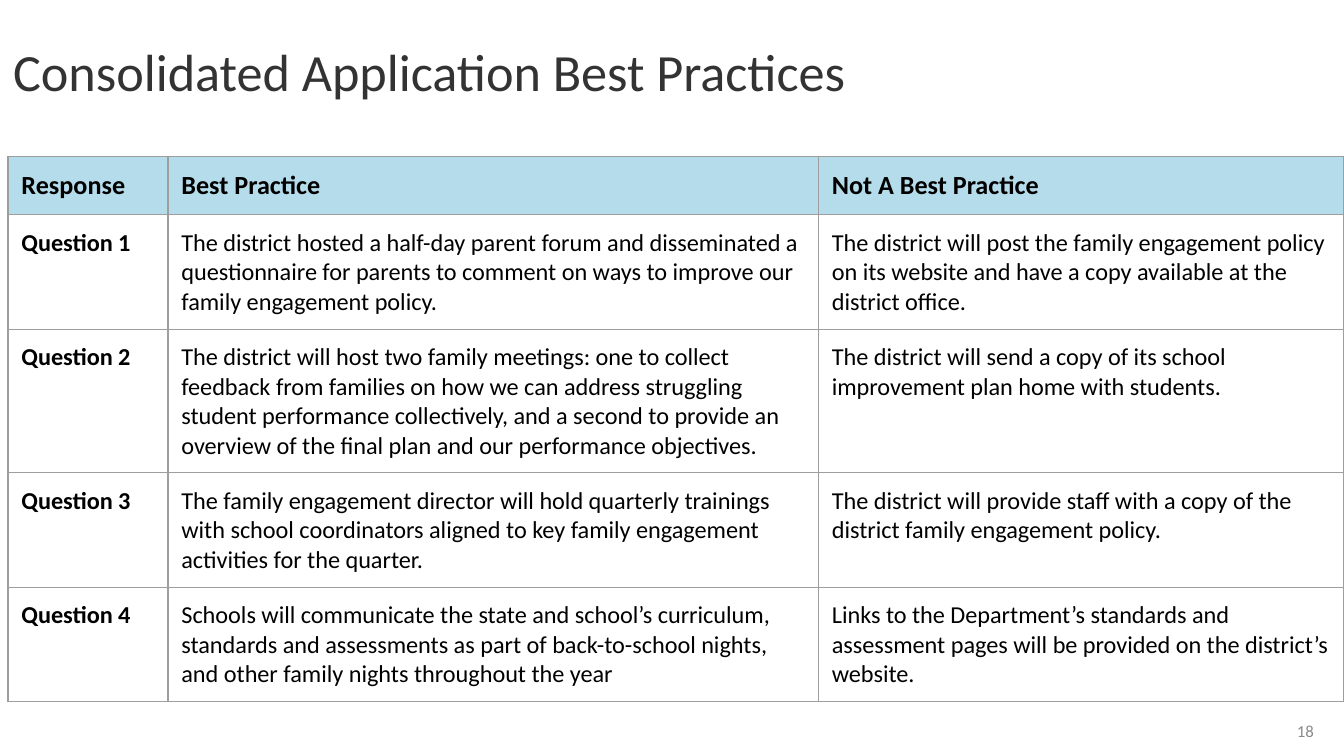
from lxml.etree import SubElement
from pptx import Presentation
from pptx.dml.color import RGBColor
from pptx.enum.text import MSO_ANCHOR as Anchor, PP_ALIGN as Align
from pptx.oxml.ns import qn
from pptx.util import Pt

PX = 4572  # EMU per px, at 200 px to the inch
FONT = "Calibri"
INK, TITLE_INK, PAGE_INK = "000000", "333333", "8A8A8A"
HEADER_FILL, GRID = "B5DCEA", "9E9E9E"

COLUMNS = [238, 968, 782]
ROWS = [84, 84, 84, 86, 86]
RESPONSES = [
    ("Response", "Best Practice", "Not A Best Practice"),
    ("Question 1",
     "The district hosted a half-day parent forum and disseminated a questionnaire "
     "for parents to comment on ways to improve our family engagement policy.",
     "The district will post the family engagement policy on its website and have "
     "a copy available at the district office."),
    ("Question 2",
     "The district will host two family meetings: one to collect feedback from "
     "families on how we can address struggling student performance collectively, "
     "and a second to provide an overview of the final plan and our performance "
     "objectives.",
     "The district will send a copy of its school improvement plan home with students."),
    ("Question 3",
     "The family engagement director will hold quarterly trainings with school "
     "coordinators aligned to key family engagement activities for the quarter.",
     "The district will provide staff with a copy of the district family engagement "
     "policy."),
    ("Question 4",
     "Schools will communicate the state and school’s curriculum, standards and "
     "assessments as part of back-to-school nights, and other family nights "
     "throughout the year",
     "Links to the Department’s standards and assessment pages will be provided on "
     "the district’s website."),
]


def px(length):
    return length * PX


def rgb(color):
    return RGBColor.from_string(color)


def set_all(target, values):
    for name, value in values.items():
        setattr(target, name, value)


def write(paragraph, text, size, color, bold=False):
    run = paragraph.add_run()
    run.text = text
    set_all(run.font, {"name": FONT, "size": Pt(size), "bold": bold})
    run.font.color.rgb = rgb(color)


def add_text(slide, box, text, size, color, inset, **paragraph_format):
    frame = slide.shapes.add_textbox(*map(px, box)).text_frame
    set_all(frame, {
        "word_wrap": True, "vertical_anchor": Anchor.MIDDLE,
        "margin_left": px(20), "margin_right": px(20),
        "margin_top": px(inset), "margin_bottom": px(inset),
    })
    paragraph = frame.paragraphs[0]
    set_all(paragraph, paragraph_format)
    write(paragraph, text, size, color)


def add_borders(cell):
    properties = cell._tc.get_or_add_tcPr()
    for position, side in enumerate(("lnL", "lnR", "lnT", "lnB")):
        line = SubElement(properties, qn(f"a:{side}"), w=str(Pt(0.75)))
        fill = SubElement(line, qn("a:solidFill"))
        SubElement(fill, qn("a:srgbClr"), val=GRID)
        properties.insert(position, line)  # borders come before the cell fill


def format_cell(cell, text, is_header, is_label):
    margins = ("margin_left", "margin_right", "margin_top", "margin_bottom")
    set_all(cell, dict.fromkeys(margins, px(20)))
    if is_header:
        cell.fill.solid()
        cell.fill.fore_color.rgb = rgb(HEADER_FILL)
    else:
        cell.fill.background()
    add_borders(cell)
    write(cell.text_frame.paragraphs[0], text, 14 if is_header else 13, INK,
          bold=is_header or is_label)


def add_practices(slide, box):
    frame = slide.shapes.add_table(len(ROWS), len(COLUMNS), *map(px, box))
    table = frame.table
    set_all(table, {"first_row": False, "horz_banding": False})
    for column, width in zip(table.columns, COLUMNS):
        column.width = px(width)
    for row, height, texts in zip(table.rows, ROWS, RESPONSES):
        row.height = px(height)
        for cell, text in zip(row.cells, texts):
            format_cell(cell, text, texts is RESPONSES[0], text is texts[0])
    frame.height = px(box[3])


def main():
    deck = Presentation()
    set_all(deck, {"slide_width": px(2000), "slide_height": px(1125)})
    slide = deck.slides.add_slide(deck.slide_layouts[6])

    # Page number
    add_text(slide, (1487, 1050, 488, 76), "18", 9, PAGE_INK, 10, alignment=Align.RIGHT)
    # Title
    add_text(slide, (0, -4, 2000, 230), "Consolidated Application Best Practices",
             28, TITLE_INK, 20, line_spacing=0.9)
    # Best practices by question
    add_practices(slide, (12, 233, 1988, 810))

    deck.save("out.pptx")


if __name__ == "__main__":
    main()
